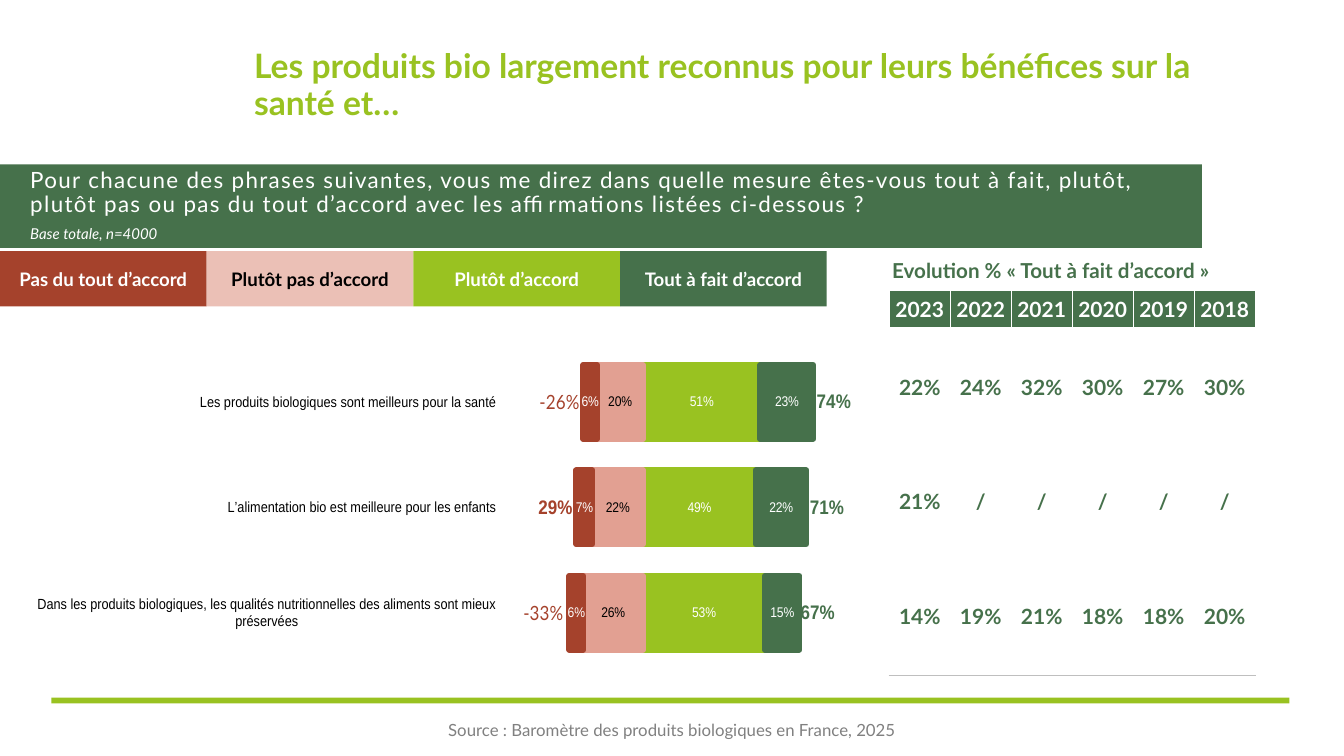
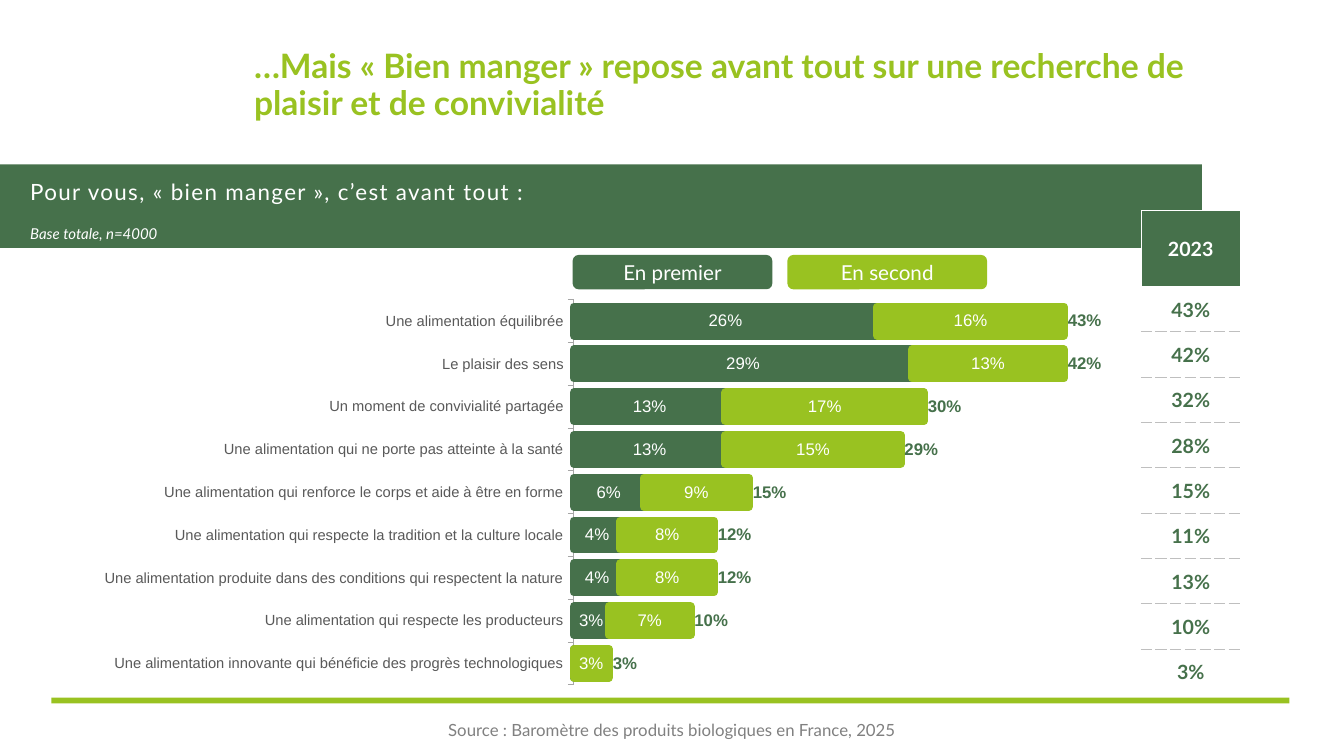
from copy import deepcopy

from pptx import Presentation
from pptx.chart.data import CategoryChartData
from pptx.dml.color import RGBColor
from pptx.enum.chart import XL_CHART_TYPE, XL_LABEL_POSITION, XL_TICK_LABEL_POSITION, XL_TICK_MARK
from pptx.enum.shapes import MSO_SHAPE
from pptx.enum.text import MSO_ANCHOR, PP_ALIGN
from pptx.oxml import parse_xml
from pptx.oxml.ns import nsdecls
from pptx.util import Inches, Pt

STACKED = XL_CHART_TYPE.BAR_STACKED
OUTSIDE_END = XL_LABEL_POSITION.OUTSIDE_END
INSIDE_BASE = XL_LABEL_POSITION.INSIDE_BASE
CENTER_LABEL = XL_LABEL_POSITION.CENTER
LOW = XL_TICK_LABEL_POSITION.LOW
NO_TICK = XL_TICK_MARK.NONE
OUTER_TICK = XL_TICK_MARK.OUTSIDE
RECTANGLE = MSO_SHAPE.RECTANGLE
ROUNDED = MSO_SHAPE.ROUNDED_RECTANGLE
MIDDLE, TOP = MSO_ANCHOR.MIDDLE, MSO_ANCHOR.TOP
LEFT, CENTER = PP_ALIGN.LEFT, PP_ALIGN.CENTER

COLORS = {
    "forest": "46714B", "lime": "99C221", "brick": "A5422C", "salmon": "E2A092",
    "blush": "EBC0B6", "white": "FFFFFF", "black": "000000", "gray": "808080",
    "axis": "A6A6A6", "axis_text": "595959", "rule": "BFBFBF",
}
PERCENT = "###0%"
UNSIGNED = "0%;0%"
NON_ZERO = "0%;0%;"


def color(name):
    return RGBColor.from_string(COLORS[name])


def style_font(font, size, tone, bold=False, italic=False, face="Lato"):
    font.name, font.size = face, Pt(size)
    font.bold, font.italic = bold, italic
    font.color.rgb = color(tone)


def write_text(frame, text, size=12, tone="white", bold=False, italic=False,
               align=LEFT, anchor=MIDDLE, margins=(0.1, 0.05, 0.1, 0.05),
               line_spacing=None, tracking=None):
    frame.word_wrap = True
    frame.vertical_anchor = anchor
    (frame.margin_left, frame.margin_top,
     frame.margin_right, frame.margin_bottom) = map(Inches, margins)
    paragraph = frame.paragraphs[0]
    paragraph.alignment = align
    if line_spacing:
        paragraph.line_spacing = line_spacing
    run = paragraph.add_run()
    run.text = text
    style_font(run.font, size, tone, bold, italic)
    if tracking:
        run.font._element.set("spc", str(tracking * 100))


def set_borders(cell, borders):
    properties = cell._tc.get_or_add_tcPr()
    sides = [side for side in "LRTB" if side in borders]
    for position, side in enumerate(sides):
        tone, width, dash = borders[side]
        properties.insert(position, parse_xml(
            f'<a:ln{side} {nsdecls("a")} w="{Pt(width)}"><a:solidFill>'
            f'<a:srgbClr val="{COLORS[tone]}"/></a:solidFill>'
            f'<a:prstDash val="{dash}"/></a:ln{side}>'))


def set_plot_layout(plot_area, bounds):
    for layout in plot_area.xpath("c:layout"):
        plot_area.remove(layout)
    values = "".join(f'<c:{key} val="{value}"/>' for key, value in zip("xywh", bounds))
    plot_area.insert(0, parse_xml(
        f'<c:layout {nsdecls("c")}><c:manualLayout><c:layoutTarget val="inner"/>'
        f'<c:xMode val="edge"/><c:yMode val="edge"/>{values}'
        f'</c:manualLayout></c:layout>'))


def move_to_second_axis(plot_area, first_series):
    bars = plot_area.xpath("c:barChart")[0]
    totals = deepcopy(bars)
    for series in bars.xpath("c:ser")[first_series:]:
        bars.remove(series)
    for series in totals.xpath("c:ser")[:first_series]:
        totals.remove(series)
    totals.xpath("c:grouping")[0].set("val", "clustered")
    bars.addnext(totals)
    axes = [deepcopy(plot_area.xpath(f"c:{kind}")[0]) for kind in ("catAx", "valAx")]
    new_ids = {axis.xpath("c:axId")[0].get("val"): str(number)
               for number, axis in enumerate(axes, 5001)}
    last_axis = plot_area.xpath("c:valAx")[-1]
    for axis in axes:
        axis.xpath("c:delete")[0].set("val", "1")
        last_axis.addnext(axis)
    axes[1].xpath("c:crosses")[0].set("val", "max")
    for part in [totals] + axes:
        for reference in part.xpath("c:axId | c:crossAx"):
            reference.set("val", new_ids[reference.get("val")])


class Deck:
    def __init__(self):
        self.presentation = Presentation()
        self.presentation.slide_width = Inches(13.33)
        self.presentation.slide_height = Inches(7.5)
        self.slide = None

    def add_slide(self, title, question):
        self.slide = self.presentation.slides.add_slide(self.presentation.slide_layouts[6])
        flush = {"margins": (0, 0, 0, 0), "line_spacing": 0.9}
        self.block((0, 1.63, 11.92, 0.83), "forest")
        self.block((0.51, 6.92, 12.28, 0.06), "lime")
        self.text((3.85, 6.97, 5.63, 0.54),
                  "Source : Baromètre des produits biologiques en France, 2025",
                  tone="gray", align=CENTER, margins=(0.13, 0.07, 0.13, 0.07))
        self.text((0.3, 1.63, 11.62, 0.58), question, size=16, tracking=1, **flush)
        self.text((0.3, 2.23, 11.62, 0.2), "Base totale, n=4000", size=10.7,
                  italic=True, **flush)
        self.text((2.52, 0.38, 9.4, 0.95), title, size=24, tone="lime", bold=True, **flush)

    def block(self, box, fill, text=None, kind=RECTANGLE, **text_format):
        shape = self.slide.shapes.add_shape(kind, *map(Inches, box))
        shape.shadow.inherit = False
        shape.fill.solid()
        shape.fill.fore_color.rgb = color(fill)
        shape.line.fill.background()
        if text:
            write_text(shape.text_frame, text, align=CENTER, **text_format)

    def text(self, box, text, **text_format):
        shape = self.slide.shapes.add_textbox(*map(Inches, box))
        write_text(shape.text_frame, text, **text_format)

    def table(self, box, heights, rows, size, borders_for):
        shape = self.slide.shapes.add_table(len(rows), len(rows[0]), *map(Inches, box))
        table = shape.table
        table.horz_banding = False
        for row, height in zip(table.rows, heights):
            row.height = Inches(height)
        for row_index, values in enumerate(rows):
            background, ink = ("white", "forest") if row_index else ("forest", "white")
            for column_index, value in enumerate(values):
                cell = table.cell(row_index, column_index)
                cell.fill.solid()
                cell.fill.fore_color.rgb = color(background)
                cell.vertical_anchor = MIDDLE
                write_text(cell.text_frame, value, size=size, tone=ink, bold=True,
                           align=CENTER)
                cell.margin_left = cell.margin_top = cell.margin_right = Inches(0.01)
                cell.margin_bottom = 0
                set_borders(cell, borders_for(row_index))

    def bar_chart(self, box, categories, series_styles, layout, gap, line_width,
                  label_size, axis_tone, axis_line=None, minimum=None, maximum=None,
                  second_axis_from=None):
        data = CategoryChartData(number_format="0%")
        data.categories = categories
        for number, style in enumerate(series_styles, 1):
            data.add_series(f"Series {number}", style["values"])
        chart = self.slide.shapes.add_chart(STACKED, *map(Inches, box), data).chart
        chart.has_legend = chart.has_title = False
        style_font(chart.font, 10, "black", face="Arial")
        plot = chart.plots[0]
        plot.gap_width, plot.overlap = gap, 100
        plot.vary_by_categories = False
        for series, style in zip(plot.series, series_styles):
            self.style_series(series, line_width, **{"size": label_size, **style})

        category_axis, value_axis = chart.category_axis, chart.value_axis
        category_axis.tick_label_position = LOW
        category_axis.major_tick_mark = OUTER_TICK
        category_axis.minor_tick_mark = NO_TICK
        category_axis.has_major_gridlines = False
        style_font(category_axis.tick_labels.font, 10.5, axis_tone, face="Arial")
        if axis_line:
            category_axis.format.line.color.rgb = color(axis_line)
            category_axis.format.line.width = Pt(0.75)
        else:
            category_axis.format.line.fill.background()
        value_axis.has_major_gridlines = False
        value_axis.visible = False
        if minimum is not None:
            value_axis.minimum_scale = minimum
        value_axis.maximum_scale = maximum

        chart_space = chart._chartSpace
        plot_area = chart_space.xpath(".//c:plotArea")[0]
        set_plot_layout(plot_area, layout)
        if second_axis_from:
            move_to_second_axis(plot_area, second_axis_from)
        for flag in chart_space.xpath(".//c:delete | .//c:showVal | .//c:autoTitleDeleted"):
            if flag.get("val") is None:
                flag.set("val", "1")

    def style_series(self, series, line_width, values, size, ink="white", fill=None,
                     bold=False, number_format=PERCENT, position=None, custom=None):
        if fill:
            series.format.fill.solid()
            series.format.fill.fore_color.rgb = color(fill)
            series.format.line.color.rgb = color(fill)
            series.format.line.width = Pt(line_width)
        else:
            series.format.fill.background()
            series.format.line.fill.background()
        labels = series.data_labels
        labels.show_value = True
        labels.number_format = number_format
        labels.number_format_is_linked = False
        style_font(labels.font, size, ink, bold, face="Arial")
        if position is not None:
            labels.position = position
        for index, text in (custom or {}).items():
            label = series.points[index].data_label
            run = label.text_frame.paragraphs[0].add_run()
            run.text = text
            style_font(run.font, size, ink)
            label.position = position


def health_slide(deck):
    deck.add_slide(
        "Les produits bio largement reconnus pour leurs bénéfices sur la santé et…",
        "Pour chacune des phrases suivantes, vous me direz dans quelle mesure êtes-vous "
        "tout à fait, plutôt, plutôt pas ou pas du tout d’accord avec les affirmations "
        "listées ci-dessous ?")
    deck.bar_chart(
        (0.37, 3.17, 8.29, 3.55),
        ["Dans les produits biologiques, les qualités nutritionnelles des aliments "
         "sont mieux préservées",
         "L’alimentation bio est meilleure pour les enfants",
         "Les produits biologiques sont meilleurs pour la santé"],
        [{"values": (0.53, 0.49, 0.51), "fill": "lime"},
         {"values": (0.15, 0.22, 0.23), "fill": "forest"},
         {"values": (-0.26, -0.22, -0.2), "fill": "salmon", "ink": "black",
          "number_format": UNSIGNED},
         {"values": (-0.06, -0.07, -0.06), "fill": "brick", "number_format": UNSIGNED},
         {"values": (0.67, 0.71, 0.74), "ink": "forest", "size": 14, "bold": True,
          "number_format": UNSIGNED, "position": OUTSIDE_END},
         {"values": (-0.33, -0.29, -0.26), "ink": "brick", "size": 14, "bold": True,
          "number_format": UNSIGNED, "position": OUTSIDE_END,
          "custom": {0: "-33%", 2: "-26%"}}],
        layout=(0.515, 0.083, 0.509, 0.884), gap=43, line_width=5, label_size=10,
        axis_tone="black", minimum=-0.6, maximum=1, second_axis_from=4)

    header_border = dict.fromkeys("LTR", ("white", 1, "solid"))
    closing_border = {"B": ("rule", 1, "solid")}
    deck.table(
        (8.82, 2.88, 3.63, 3.82), (0.37, 1.18, 1.09, 1.18),
        [("2023", "2022", "2021", "2020", "2019", "2018"),
         ("22%", "24%", "32%", "30%", "27%", "30%"),
         ("21%", "/", "/", "/", "/", "/"),
         ("14%", "19%", "21%", "18%", "18%", "20%")],
        15, lambda row: {0: header_border, 3: closing_border}.get(row, {}))

    answers = [("Pas du tout d’accord", "brick", "white"),
               ("Plutôt pas d’accord", "blush", "black"),
               ("Plutôt d’accord", "lime", "white"),
               ("Tout à fait d’accord", "forest", "white")]
    for index, (answer, fill, ink) in enumerate(answers):
        deck.block((index * 2.05, 2.49, 2.05, 0.55), fill, answer,
                   size=13.3, tone=ink, bold=True)
    deck.text((8.75, 2.51, 3.78, 0.35), "Evolution % « Tout à fait d’accord »",
              size=14.7, tone="forest", bold=True, anchor=TOP)


def eating_well_slide(deck):
    deck.add_slide(
        "…Mais « Bien manger » repose avant tout sur une recherche de plaisir "
        "et de convivialité",
        "Pour vous, « bien manger », c’est avant tout :")
    deck.bar_chart(
        (0.3, 2.77, 11.62, 4.15),
        ["Une alimentation innovante qui bénéficie des progrès technologiques",
         "Une alimentation qui respecte les producteurs",
         "Une alimentation produite dans des conditions qui respectent la nature",
         "Une alimentation qui respecte la tradition et la culture locale",
         "Une alimentation qui renforce le corps et aide à être en forme",
         "Une alimentation qui ne porte pas atteinte à la santé",
         "Un moment de convivialité partagée",
         "Le plaisir des sens",
         "Une alimentation équilibrée"],
        [{"values": (0, 0.03, 0.04, 0.04, 0.06, 0.13, 0.13, 0.29, 0.26),
          "fill": "forest", "number_format": NON_ZERO, "position": CENTER_LABEL},
         {"values": (0.03, 0.07, 0.08, 0.08, 0.09, 0.15, 0.17, 0.13, 0.16),
          "fill": "lime", "position": CENTER_LABEL},
         {"values": (0.03, 0.1, 0.12, 0.12, 0.15, 0.29, 0.3, 0.42, 0.43),
          "ink": "forest", "bold": True, "position": INSIDE_BASE}],
        layout=(0.464, 0.049, 0.498, 0.921), gap=50, line_width=6, label_size=12,
        axis_tone="axis_text", axis_line="axis", maximum=0.5)

    for index, (label, fill) in enumerate([("En premier", "forest"), ("En second", "lime")]):
        deck.block((5.68 + index * 2.13, 2.53, 1.98, 0.34), fill, label,
                   kind=ROUNDED, size=14.7)

    shares = ("43%", "42%", "32%", "28%", "15%", "11%", "13%", "10%", "3%")
    solid, dashed = ("white", 1, "solid"), ("rule", 0.5, "sysDash")

    def borders_for(row):
        return {"L": solid, "R": solid, "T": dashed if row > 1 else solid,
                "B": dashed if 0 < row < len(shares) else solid}

    deck.table((11.32, 2.09, 0.98, 4.8), [0.75] + [0.45] * len(shares),
               [("2023",)] + [(share,) for share in shares], 14, borders_for)


def main():
    deck = Deck()
    health_slide(deck)
    eating_well_slide(deck)
    deck.presentation.save("out.pptx")


if __name__ == "__main__":
    main()
